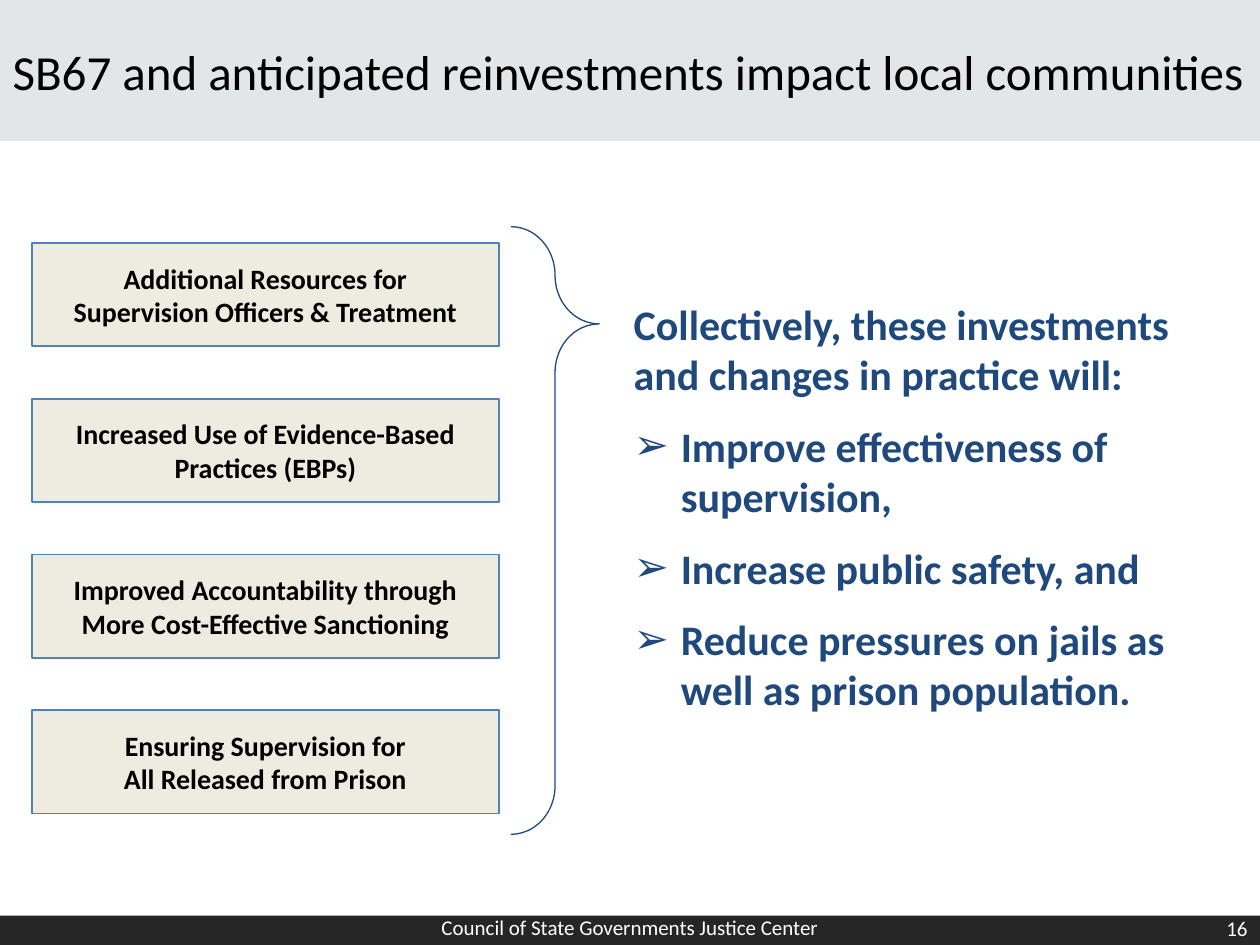
from lxml import etree
from pptx import Presentation
from pptx.dml.color import RGBColor
from pptx.enum.shapes import MSO_SHAPE
from pptx.enum.text import MSO_ANCHOR, MSO_AUTO_SIZE, PP_ALIGN
from pptx.oxml.ns import qn
from pptx.util import Cm, Pt

RECTANGLE, BRACE = MSO_SHAPE.RECTANGLE, MSO_SHAPE.RIGHT_BRACE
TOP, MIDDLE = MSO_ANCHOR.TOP, MSO_ANCHOR.MIDDLE
LEFT, CENTER, RIGHT = PP_ALIGN.LEFT, PP_ALIGN.CENTER, PP_ALIGN.RIGHT
NO_AUTOFIT = MSO_AUTO_SIZE.NONE

FONT = "Calibri"
BLACK, WHITE, NAVY = "000000", "FFFFFF", "1F497D"
TITLE_BAND, FOOTER_BAND = "E2E6E9", "262626"
BOX_FILL, BOX_LINE = "EEECE1", "4F81BD"

TITLE = "SB67 and anticipated reinvestments impact local communities"
INVESTMENTS = [
    "Additional Resources for\nSupervision Officers & Treatment",
    "Increased Use of Evidence-Based Practices (EBPs)",
    "Improved Accountability through More Cost-Effective Sanctioning",
    "Ensuring Supervision for\nAll Released from Prison",
]
INTRO = "Collectively, these investments and changes in practice will:"
OUTCOMES = [
    "Improve effectiveness of supervision,",
    "Increase public safety, and",
    "Reduce pressures on jails as well as prison population.",
]


def color(hex_string):
    """Return the colour for a hex string."""
    return RGBColor.from_string(hex_string)


def place(shape, left, top, width, height):
    """Position and size a shape, in centimetres."""
    shape.left, shape.top = Cm(left), Cm(top)
    shape.width, shape.height = Cm(width), Cm(height)


def format_text(frame, size, text_color, align, bold=False, anchor=MIDDLE):
    """Apply one look to every paragraph of a text frame."""
    frame.word_wrap = True
    frame.auto_size = NO_AUTOFIT
    frame.vertical_anchor = anchor
    for paragraph in frame.paragraphs:
        paragraph.alignment = align
        paragraph.font.name = FONT
        paragraph.font.size = Pt(size)
        paragraph.font.bold = bold
        paragraph.font.color.rgb = color(text_color)


def set_bullet(paragraph, indent, char=None):
    """Give a paragraph a hanging bullet, or none without a character."""
    properties = paragraph._p.get_or_add_pPr()
    properties.set("marL", str(Cm(indent)))
    properties.set("indent", str(-Cm(indent)))
    if char:
        etree.SubElement(properties, qn("a:buChar")).set("char", char)
    else:
        etree.SubElement(properties, qn("a:buNone"))


def add_preset(slide, preset, bounds, fill=None, line=None, line_width=1):
    """Add a flat preset shape with optional fill and outline."""
    shape = slide.shapes.add_shape(preset, *map(Cm, bounds))
    shape.shadow.inherit = False
    if fill:
        shape.fill.solid()
        shape.fill.fore_color.rgb = color(fill)
    else:
        shape.fill.background()
    if line:
        shape.line.color.rgb = color(line)
        shape.line.width = Pt(line_width)
    else:
        shape.line.fill.background()
    return shape


def add_title(slide):
    """Turn the title placeholder into the band across the top."""
    title = slide.shapes.title
    place(title, 0, 0, 25.4, 2.84)
    title.fill.solid()
    title.fill.fore_color.rgb = color(TITLE_BAND)
    title.text_frame.text = TITLE
    format_text(title.text_frame, 28, BLACK, LEFT)


def add_footer_text(slide, text, bounds, align):
    """Add a white label over the footer band."""
    label = slide.shapes.add_textbox(*map(Cm, bounds))
    label.text_frame.text = text
    format_text(label.text_frame, 12, WHITE, align)


def add_investments(slide):
    """Stack the investment boxes and brace them together."""
    for row, text in enumerate(INVESTMENTS):
        bounds = (0.64, 4.9 + 3.14 * row, 9.42, 2.08)
        box = add_preset(slide, RECTANGLE, bounds, BOX_FILL, BOX_LINE)
        box.text_frame.text = text
        format_text(box.text_frame, 16, BLACK, CENTER, bold=True)
    brace = add_preset(slide, BRACE, (10.3, 4.57, 1.78, 12.25), line=NAVY, line_width=0.75)
    brace.adjustments[0] = 0.71
    brace.adjustments[1] = 0.16


def add_outcomes(slide):
    """Fill the body placeholder with the intro and its bulleted outcomes."""
    body = slide.placeholders[1]
    place(body, 12.52, 5.89, 12.5, 8.71)
    frame = body.text_frame
    frame.text = "\n".join([INTRO, *OUTCOMES])
    intro, *outcomes = frame.paragraphs
    intro.space_before = Pt(0)
    set_bullet(intro, 0)
    for outcome in outcomes:
        outcome.space_before = Pt(12)
        set_bullet(outcome, 0.95, "➢")
    format_text(frame, 24, NAVY, LEFT, bold=True, anchor=TOP)


def main():
    """Build and save the slide."""
    deck = Presentation()
    deck.slide_width, deck.slide_height = Cm(25.4), Cm(19.05)
    slide = deck.slides.add_slide(deck.slide_layouts[1])
    add_title(slide)
    add_preset(slide, RECTANGLE, (0, 18.46, 25.4, 0.59), FOOTER_BAND)
    add_footer_text(slide, "16", (19.48, 18.21, 5.92, 1.02), RIGHT)
    add_footer_text(slide, "Council of State Governments Justice Center",
                    (8.18, 18.16, 9.04, 1.07), CENTER)
    add_investments(slide)
    add_outcomes(slide)
    deck.save("out.pptx")


if __name__ == "__main__":
    main()
